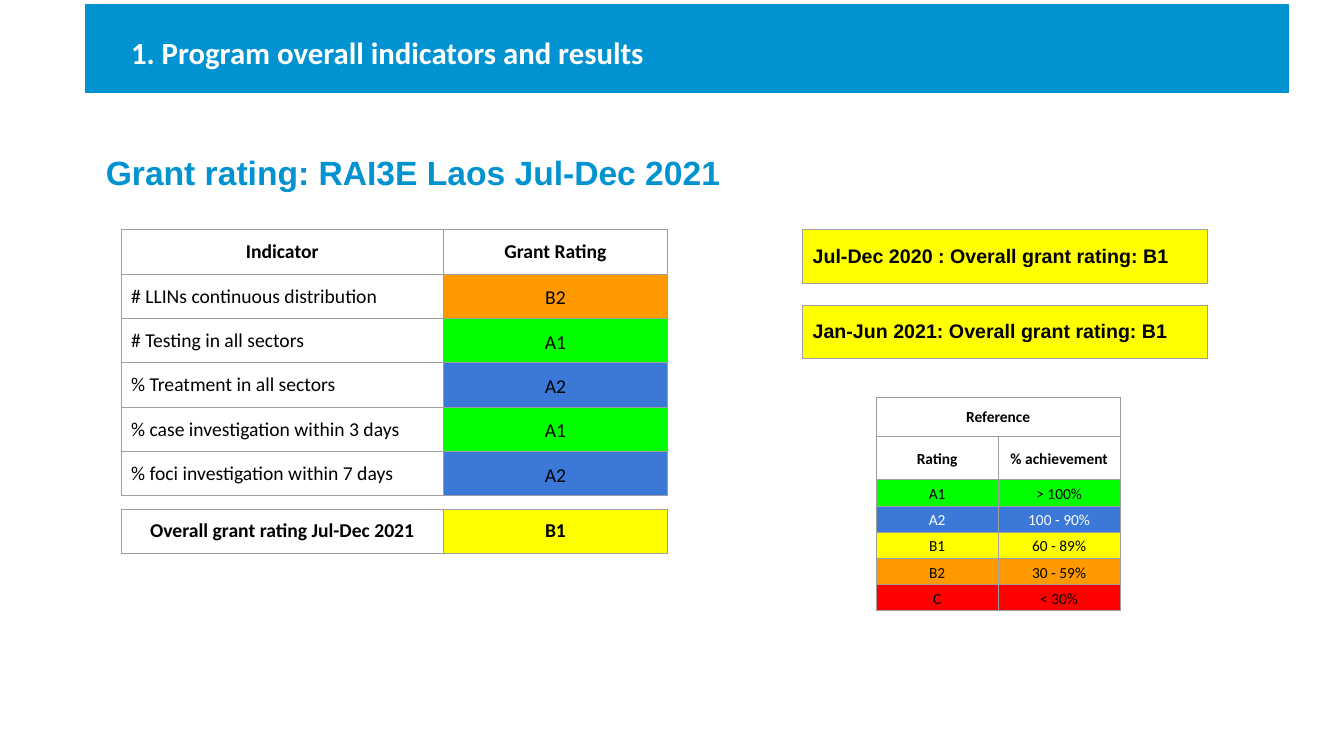
import pptx
import pptx.dml.color
import pptx.enum.shapes
import pptx.enum.text
import pptx.oxml
import pptx.oxml.ns
import pptx.util

Inches = pptx.util.Inches
RGBColor = pptx.dml.color.RGBColor
ALIGN = pptx.enum.text.PP_ALIGN
MIDDLE = pptx.enum.text.MSO_ANCHOR.MIDDLE

BLUE = RGBColor(0x00, 0x92, 0xD1)
WHITE = RGBColor(0xFF, 0xFF, 0xFF)
BLACK = RGBColor(0x00, 0x00, 0x00)
GREY = RGBColor(0x9E, 0x9E, 0x9E)
YELLOW = RGBColor(0xFF, 0xFF, 0x00)
RATING_FILLS = {
    "A1": RGBColor(0x00, 0xFF, 0x00),
    "A2": RGBColor(0x3C, 0x78, 0xD8),
    "B1": YELLOW,
    "B2": RGBColor(0xFF, 0x99, 0x00),
    "C": RGBColor(0xFF, 0x00, 0x00),
}

# Cell formats: margins are (left and right, top and bottom) in inches
ROOMY, TIGHT = (0.1, 0.1), (0.03, 0.02)
HEADER = {"bold": True, "align": ALIGN.CENTER, "margins": ROOMY}
LABEL = {"bold": False, "align": ALIGN.LEFT, "margins": ROOMY}
RATING = {"bold": False, "align": ALIGN.CENTER, "margins": TIGHT, "spacing": 1.15}
SUBHEADER = {**RATING, "bold": True}
STRIP = {"bold": True, "align": ALIGN.LEFT, "margins": ROOMY, "font": "Arial"}

INDICATORS = [
    ("# LLINs continuous distribution", "B2"),
    ("# Testing in all sectors", "A1"),
    ("% Treatment in all sectors", "A2"),
    ("% case investigation within 3 days", "A1"),
    ("% foci investigation within 7 days", "A2"),
]
ACHIEVEMENTS = [("A1", "> 100%"), ("A2", "100 - 90%"), ("B1", "60 - 89%"),
                ("B2", "30 - 59%"), ("C", "< 30%")]
PAST_RATINGS = ["Jul-Dec 2020 : Overall grant rating: B1",
                "Jan-Jun 2021: Overall grant rating: B1"]


def format_font(font, **values):
    color = values.pop("color")
    for key, value in values.items():
        setattr(font, key, value)
    font.color.rgb = color


def add_borders(cell):
    properties = cell._tc.get_or_add_tcPr()
    for side in ("lnL", "lnR", "lnT", "lnB"):
        properties.append(pptx.oxml.parse_xml(
            f'<a:{side} {pptx.oxml.ns.nsdecls("a")} w="9525"><a:solidFill>'
            f'<a:srgbClr val="{GREY}"/></a:solidFill></a:{side}>'))


def fill_cell(cell, text, style, fill=WHITE, color=BLACK, size=14):
    add_borders(cell)
    cell.fill.solid()
    cell.fill.fore_color.rgb = fill
    cell.vertical_anchor = MIDDLE
    across, down = style["margins"]
    cell.margin_left = cell.margin_right = Inches(across)
    cell.margin_top = cell.margin_bottom = Inches(down)
    cell.text = text
    paragraph = cell.text_frame.paragraphs[0]
    paragraph.alignment = style["align"]
    paragraph.line_spacing = style.get("spacing", 1.0)
    format_font(paragraph.font, name=style.get("font", "Calibri"), bold=style["bold"],
                size=pptx.util.Pt(size), color=color)


def add_grid(slide, left, top, widths, heights, rows, size=14):
    """Each cell of rows is (text, style, fill, text colour); the last two are optional."""
    table = slide.shapes.add_table(
        len(heights), len(widths), Inches(left), Inches(top),
        Inches(sum(widths)), Inches(sum(heights))).table
    table.first_row = table.horz_banding = False
    for column, width in zip(table.columns, widths):
        column.width = Inches(width)
    for row, height, contents in zip(table.rows, heights, rows):
        row.height = Inches(height)
        for cell, content in zip(row.cells, contents):
            fill_cell(cell, *content, size=size)
    return table


def add_title_bar(slide, left, top, width, height):
    bar = slide.shapes.add_shape(
        pptx.enum.shapes.MSO_SHAPE.RECTANGLE,
        Inches(left), Inches(top), Inches(width), Inches(height))
    bar.shadow.inherit = False
    bar.fill.solid()
    bar.fill.fore_color.rgb = bar.line.color.rgb = BLUE
    bar.line.width = pptx.util.Pt(0.75)
    frame = bar.text_frame
    for key, value in {"margin_left": Inches(0.45), "margin_right": 0, "margin_top": 0,
                       "margin_bottom": 0, "vertical_anchor": MIDDLE}.items():
        setattr(frame, key, value)
    frame.text = "1. Program overall indicators and results"
    paragraph = frame.paragraphs[0]
    paragraph.alignment = ALIGN.LEFT
    paragraph.line_spacing = 1.2
    format_font(paragraph.font, name="Calibri", bold=True,
                size=pptx.util.Pt(22), color=WHITE)


def add_heading(slide, left, top, width, height):
    frame = slide.shapes.add_textbox(
        Inches(left), Inches(top), Inches(width), Inches(height)).text_frame
    frame.word_wrap = True
    for side in ("left", "right", "top", "bottom"):
        setattr(frame, f"margin_{side}", 0)
    frame.text = "Grant rating: RAI3E Laos Jul-Dec 2021"
    paragraph = frame.paragraphs[0]
    paragraph.line_spacing = 1.3
    format_font(paragraph.font, name="Arial", bold=True,
                size=pptx.util.Pt(24), color=BLUE)


def add_current_ratings(slide, left, top, width):
    row_height, rating_width = 0.44, 2.22
    widths = [width - rating_width, rating_width]
    rows = [[("Indicator", HEADER), ("Grant Rating", HEADER)]]
    rows += [[(name, LABEL), (rating, RATING, RATING_FILLS[rating])]
             for name, rating in INDICATORS]
    add_grid(slide, left, top, widths, [row_height] * len(rows), rows)
    # Overall rating below the indicators
    overall = [("Overall grant rating Jul-Dec 2021", HEADER),
               ("B1", HEADER, RATING_FILLS["B1"])]
    add_grid(slide, left, top + 2.77, widths, [row_height], [overall])


def add_past_ratings(slide, left, top, width):
    for index, text in enumerate(PAST_RATINGS):
        add_grid(slide, left, top + 0.75 * index, [width], [0.53],
                 [[(text, STRIP, YELLOW)]])


def add_reference(slide, left, top, width):
    rows = [[("Reference", HEADER), ("", HEADER)],
            [("Rating", SUBHEADER), ("% achievement", SUBHEADER)]]
    for rating, achievement in ACHIEVEMENTS:
        color = WHITE if rating == "A2" else BLACK
        rows.append([(text, RATING, RATING_FILLS[rating], color)
                     for text in (rating, achievement)])
    heights = [0.39, 0.43] + [0.26] * len(ACHIEVEMENTS)
    table = add_grid(slide, left, top, [width / 2] * 2, heights, rows, size=11)
    table.cell(0, 0).merge(table.cell(0, 1))


def main():
    deck = pptx.Presentation()
    deck.slide_width, deck.slide_height = Inches(13.33), Inches(7.5)
    slide = deck.slides.add_slide(deck.slide_layouts[6])
    # Title and heading
    add_heading(slide, 1.05, 1.39, 11.93, 5.43)
    add_title_bar(slide, 0.85, 0.05, 11.93, 0.87)
    # Current period on the left, history and scale on the right
    add_current_ratings(slide, 1.2, 2.28, 5.42)
    add_past_ratings(slide, 7.96, 2.28, 4.02)
    add_reference(slide, 8.69, 3.94, 2.42)
    deck.save("out.pptx")


if __name__ == "__main__":
    main()
